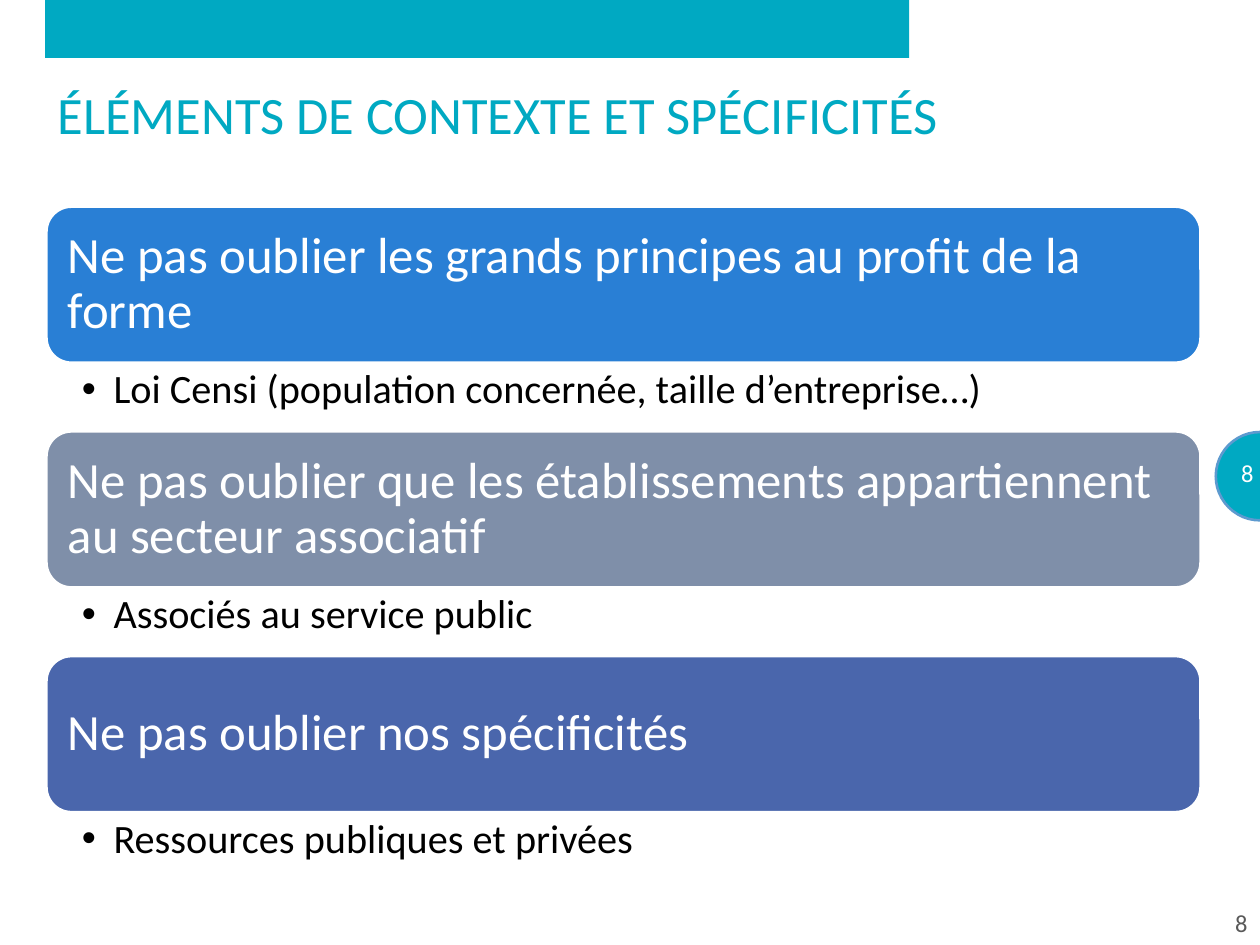
from dataclasses import dataclass

from lxml.etree import SubElement
from pptx import Presentation
from pptx.dml.color import RGBColor
from pptx.enum.shapes import MSO_SHAPE as Preset
from pptx.enum.text import MSO_ANCHOR as Anchor, MSO_AUTO_SIZE as AutoSize, PP_ALIGN as Align
from pptx.oxml.ns import qn
from pptx.util import Cm, Pt

TITLE = "ÉLÉMENTS DE CONTEXTE ET SPÉCIFICITÉS"
PAGE_NUMBER = "8"
SECTIONS = [
    ("Ne pas oublier les grands principes au profit de la forme",
     "Loi Censi (population concernée, taille d’entreprise…)", "297FD5"),
    ("Ne pas oublier que les établissements appartiennent au secteur associatif",
     "Associés au service public", "7F8FA9"),
    ("Ne pas oublier nos spécificités",
     "Ressources publiques et privées", "4A66AC"),
]


@dataclass(frozen=True)
class Theme:
    font: str = "Calibri"
    accent: str = "00A9C2"
    ring: str = "5D9ACF"
    white: str = "FFFFFF"
    black: str = "000000"
    grey: str = "595959"
    title_size: int = 30
    card_size: int = 29
    bullet_size: int = 23
    number_size: int = 14


THEME = Theme()
LEFT, WIDTH = 0.91, 23.32
FIRST_TOP, CARD_HEIGHT, BULLET_HEIGHT = 4.14, 3.2, 1.34
PITCH = CARD_HEIGHT + BULLET_HEIGHT - 0.01


def color(value):
    return RGBColor.from_string(value)


def add_panel(page, preset, area, fill, line=None, line_width=0):
    panel = page.shapes.add_shape(preset, *map(Cm, area))
    panel.shadow.inherit = False
    panel.fill.solid()
    panel.fill.fore_color.rgb = color(fill)
    if line:
        panel.line.color.rgb = color(line)
        panel.line.width = Pt(line_width)
    else:
        panel.line.fill.background()
    return panel


def add_box(page, area):
    return page.shapes.add_textbox(*map(Cm, area))


def write(box, text, size, ink, anchor=Anchor.TOP, align=Align.LEFT,
          insets=(0.25, 0.13, 0.25, 0.13), spacing=None, bullet=False):
    frame = box.text_frame
    frame.word_wrap = True
    frame.auto_size = AutoSize.NONE
    frame.vertical_anchor = anchor
    (frame.margin_left, frame.margin_top,
     frame.margin_right, frame.margin_bottom) = map(Cm, insets)
    para = frame.paragraphs[0]
    para.alignment = align
    if spacing:
        para.line_spacing = spacing
    if bullet:
        props = para._p.get_or_add_pPr()
        props.set("marL", str(Cm(0.64)))
        props.set("indent", str(-Cm(0.64)))
        SubElement(props, qn("a:buFont"), typeface="Arial")
        SubElement(props, qn("a:buChar"), char="•")
    span = para.add_run()
    span.text = text
    span.font.name = THEME.font
    span.font.size = Pt(size)
    span.font.color.rgb = color(ink)


def add_section(page, index, heading, detail, fill):
    top = FIRST_TOP + index * PITCH
    card = add_panel(page, Preset.ROUNDED_RECTANGLE, (LEFT, top, WIDTH, CARD_HEIGHT),
                     fill, THEME.white, 3)
    write(card, heading, THEME.card_size, THEME.white, Anchor.MIDDLE,
          insets=(0.3,) * 4, spacing=0.9)
    box = add_box(page, (LEFT, top + CARD_HEIGHT, WIDTH, BULLET_HEIGHT))
    write(box, detail, THEME.bullet_size, THEME.black,
          insets=(0.74, 0.1, 0.58, 0.1), spacing=0.9, bullet=True)


def main():
    deck = Presentation()
    deck.slide_width, deck.slide_height = Cm(25.4), Cm(19.05)
    page = deck.slides.add_slide(deck.slide_layouts.get_by_name("Title Only"))

    add_panel(page, Preset.RECTANGLE, (LEFT, 0, 17.42, 1.17), THEME.accent)
    add_panel(page, Preset.OVAL, (24.51, 8.71, 1.78, 1.78), THEME.accent, THEME.ring, 1.5)

    title = page.shapes.title
    title.left, title.top, title.width, title.height = map(Cm, (LEFT, 1.52, 23.6, 1.96))
    write(title, TITLE, THEME.title_size, THEME.accent)

    for area, ink in [((24.43, 9.02, 1.09, 1.02), THEME.white),
                      ((22.43, 18.14, 2.97, 0.91), THEME.grey)]:
        write(add_box(page, area), PAGE_NUMBER, THEME.number_size, ink,
              Anchor.MIDDLE, Align.RIGHT)

    for index, section in enumerate(SECTIONS):
        add_section(page, index, *section)

    deck.save("out.pptx")


if __name__ == "__main__":
    main()
